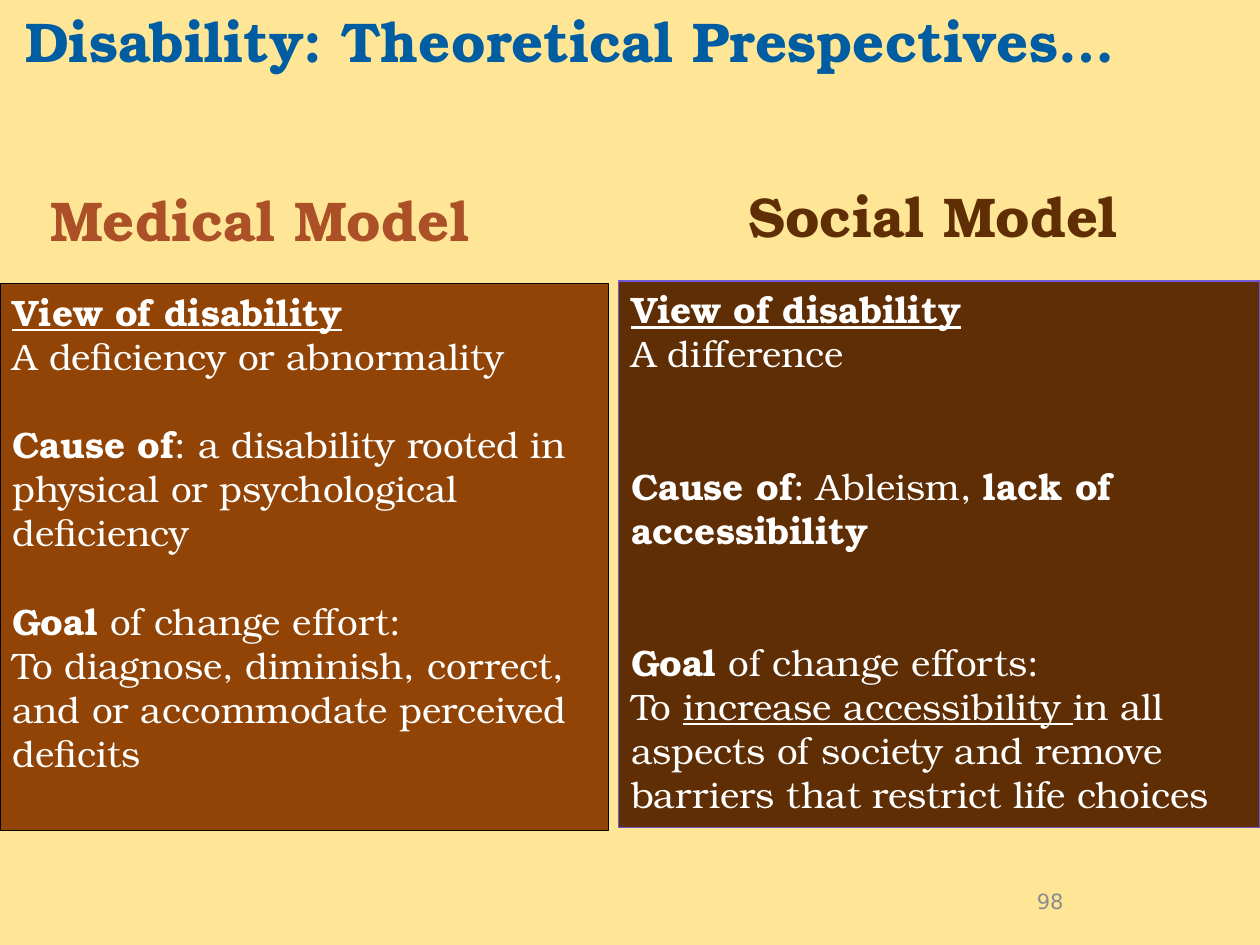
"""Build a slide that sets the medical and social models of disability side by side."""
from pptx import Presentation
from pptx.dml.color import RGBColor
from pptx.enum.shapes import MSO_SHAPE
from pptx.enum.text import MSO_ANCHOR, MSO_AUTO_SIZE, PP_ALIGN
from pptx.util import Inches, Pt

CREAM = RGBColor(0xFF, 0xE6, 0x97)
BLUE = RGBColor(0x00, 0x5D, 0xA2)
RUST = RGBColor(0xAB, 0x50, 0x27)
BROWN = RGBColor(0x91, 0x44, 0x05)
DARK_BROWN = RGBColor(0x60, 0x2E, 0x04)
VIOLET = RGBColor(0x71, 0x58, 0xD7)
BLACK = RGBColor(0x00, 0x00, 0x00)
WHITE = RGBColor(0xFF, 0xFF, 0xFF)
GRAY = RGBColor(0x8C, 0x8C, 0x8C)

SERIF, SANS = "TeX Gyre Bonum", "DejaVu Sans"
HEADING_SIZE, BODY_SIZE, NUMBER_SIZE = 32, 21, 12
LINE_PITCH = BODY_SIZE * 1.2
HEADING_HEIGHT, PANEL_HEIGHT = 0.64, 4.34

TITLE = "Disability: Theoretical Prespectives…"
PAGE_NUMBER = "98"

MODELS = [
    {
        "heading": "Medical Model", "heading_at": (0.3, 1.42, 4.24), "heading_color": RUST,
        "panel_at": (0, 2.25, 4.83), "fill": BROWN, "line": BLACK, "gap_lines": 1,
        "sections": [
            [[("View of disability", "bu")], [("A deficiency or abnormality", "")]],
            [[("Cause of", "b"),
              (": a disability rooted in physical or psychological deficiency", "")]],
            [[("Goal ", "b"), ("of change effort:", "")],
             [("To diagnose, diminish, correct, and or accommodate perceived deficits", "")]],
        ],
    },
    {
        "heading": "Social Model", "heading_at": (5.84, 1.39, 3.23), "heading_color": DARK_BROWN,
        "panel_at": (4.91, 2.23, 5.09), "fill": DARK_BROWN, "line": VIOLET, "gap_lines": 2,
        "sections": [
            [[("View of disability", "bu")], [("A difference", "")]],
            [[("Cause of", "b"), (": Ableism, ", ""), ("lack of accessibility", "b")]],
            [[("Goal ", "b"), ("of change efforts:", "")],
             [("To ", ""), ("increase accessibility ", "u"),
              ("in all aspects of society and remove barriers that restrict life choices", "")]],
        ],
    },
]


def add_span(para, text, size, color, style="", font=SERIF):
    span = para.add_run()
    span.text = text
    span.font.name = font
    span.font.size = Pt(size)
    span.font.color.rgb = color
    span.font.bold = "b" in style
    span.font.underline = "u" in style


def set_frame(box, anchor=MSO_ANCHOR.TOP, wrap=True):
    frame = box.text_frame
    frame.word_wrap = wrap
    frame.auto_size = MSO_AUTO_SIZE.NONE
    frame.vertical_anchor = anchor
    return frame


def add_panel(page, model):
    left, top, width = map(Inches, model["panel_at"])
    panel = page.shapes.add_shape(MSO_SHAPE.RECTANGLE, left, top, width, Inches(PANEL_HEIGHT))
    panel.shadow.inherit = False
    panel.fill.solid()
    panel.fill.fore_color.rgb = model["fill"]
    panel.line.color.rgb = model["line"]
    panel.line.width = Pt(0.75)
    frame = set_frame(panel)
    para = None
    for section in model["sections"]:
        for index, spans in enumerate(section):
            is_new_section = para is not None and index == 0
            para = frame.add_paragraph() if para is not None else frame.paragraphs[0]
            para.alignment = PP_ALIGN.LEFT
            if is_new_section:
                para.space_before = Pt(model["gap_lines"] * LINE_PITCH)
            for text, style in spans:
                add_span(para, text, BODY_SIZE, WHITE, style)


def add_heading(page, model):
    left, top, width = map(Inches, model["heading_at"])
    box = page.shapes.add_textbox(left, top, width, Inches(HEADING_HEIGHT))
    para = set_frame(box, wrap=False).paragraphs[0]
    para.alignment = PP_ALIGN.LEFT
    add_span(para, model["heading"], HEADING_SIZE, model["heading_color"], "b")


def set_title(page):
    title = page.shapes.title
    title.left, title.top = Inches(0.04), Inches(0)
    title.width, title.height = Inches(9.96), Inches(HEADING_HEIGHT)
    frame = set_frame(title)
    frame.margin_left = Inches(0.16)
    para = frame.paragraphs[0]
    para.alignment = PP_ALIGN.LEFT
    add_span(para, TITLE, HEADING_SIZE, BLUE, "b")


def add_page_number(page):
    box = page.shapes.add_textbox(Inches(7.17), Inches(6.95), Inches(2.33), Inches(0.4))
    para = set_frame(box, MSO_ANCHOR.MIDDLE).paragraphs[0]
    para.alignment = PP_ALIGN.CENTER
    add_span(para, PAGE_NUMBER, NUMBER_SIZE, GRAY, font=SANS)


def main():
    deck = Presentation()
    deck.slide_width, deck.slide_height = Inches(10), Inches(7.5)
    page = deck.slides.add_slide(deck.slide_layouts[5])
    page.background.fill.solid()
    page.background.fill.fore_color.rgb = CREAM
    set_title(page)
    for model in MODELS:
        add_panel(page, model)
        add_heading(page, model)
    add_page_number(page)
    deck.save("out.pptx")


if __name__ == "__main__":
    main()
